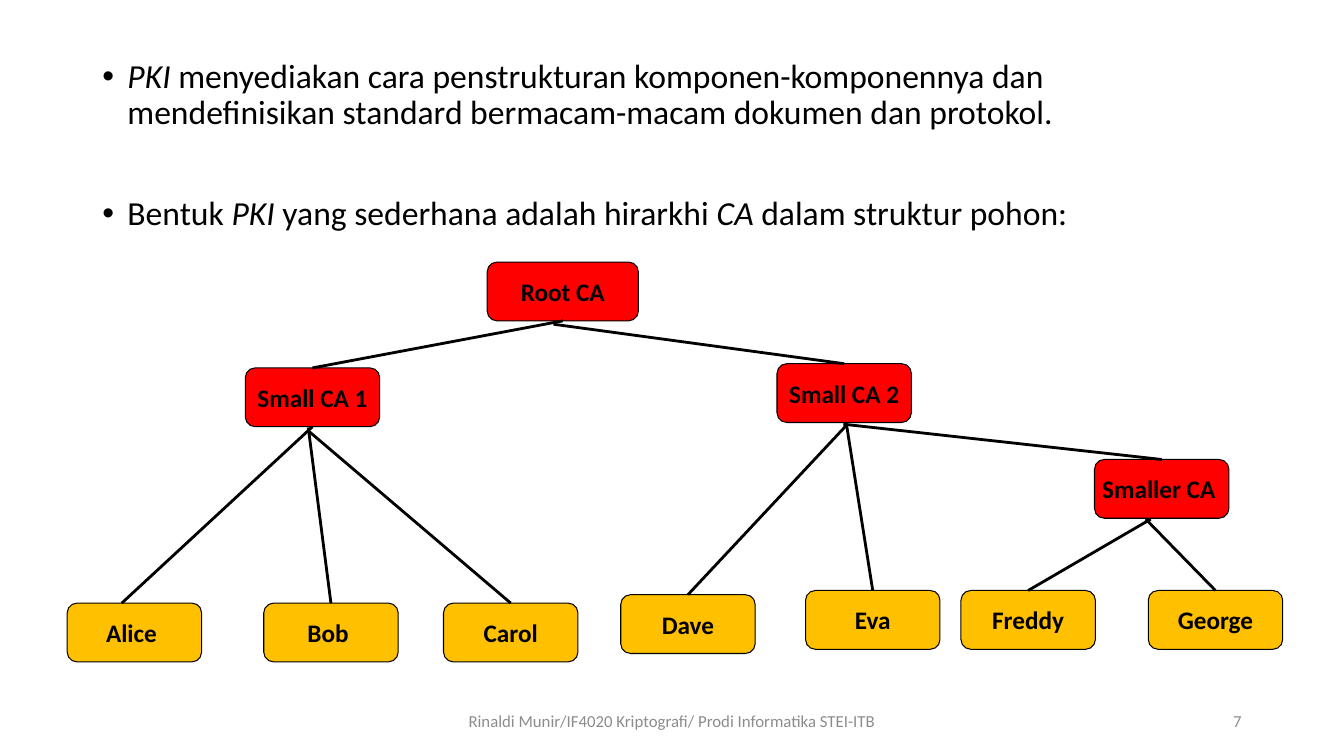
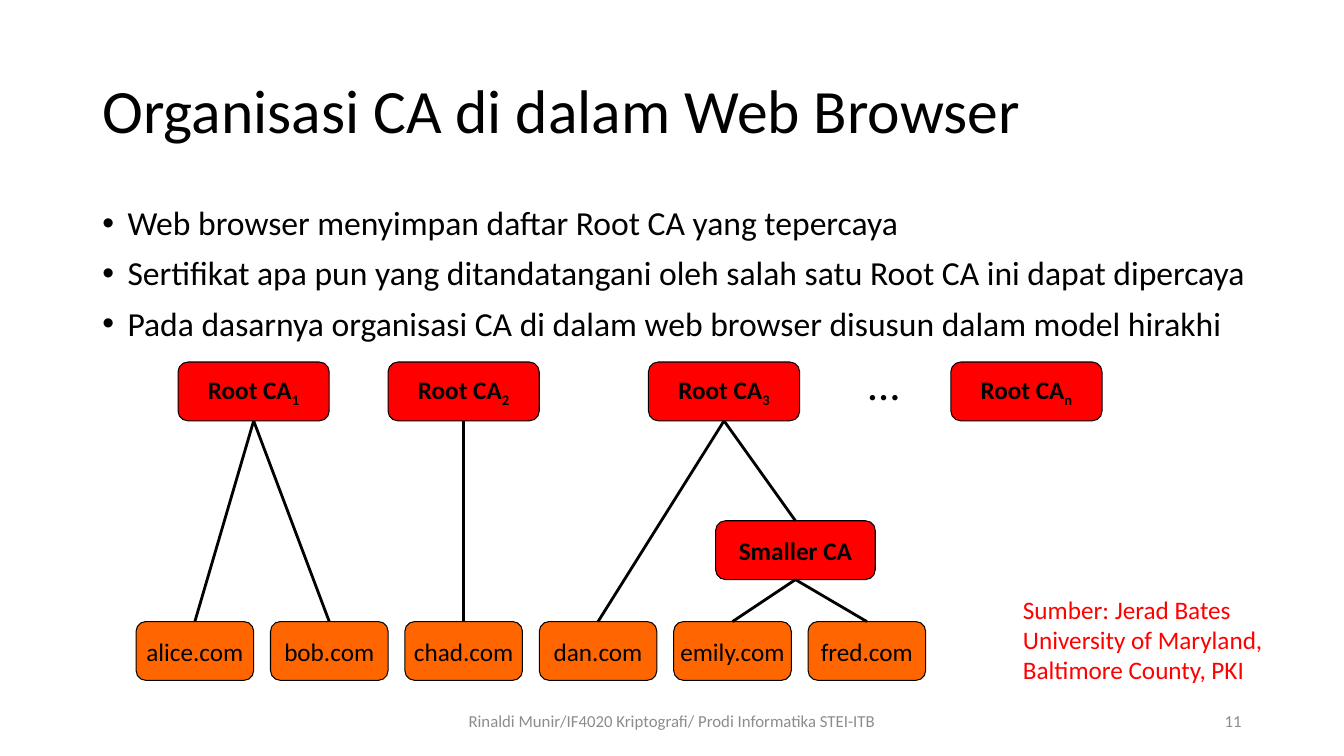
import lxml.etree
import pptx
import pptx.dml.color
import pptx.enum.shapes
import pptx.enum.text
import pptx.oxml.ns
import pptx.util

PX = 7620
SLIDE_W, SLIDE_H = 1600, 900
NODE_H = 70
FONT = "Calibri"
BLACK, GREY, RED, AMBER, ORANGE = "000000", "8C8C8C", "FF0000", "FFC000", "FF6600"
FOOTER = "Rinaldi Munir/IF4020 Kriptografi/ Prodi Informatika STEI-ITB"
LEFT = pptx.enum.text.PP_ALIGN.LEFT
CENTER = pptx.enum.text.PP_ALIGN.CENTER
RIGHT = pptx.enum.text.PP_ALIGN.RIGHT
TOP = pptx.enum.text.MSO_ANCHOR.TOP
MIDDLE = pptx.enum.text.MSO_ANCHOR.MIDDLE


def px(n):
    return pptx.util.Emu(n * PX)


def rgb(color):
    return pptx.dml.color.RGBColor.from_string(color)


def add_xml(parent, tag, **attrs):
    return lxml.etree.SubElement(parent, pptx.oxml.ns.qn(tag), **attrs)


def set_bullet(p):
    pPr = p._p.get_or_add_pPr()
    pPr.set("marL", str(30 * PX))
    pPr.set("indent", str(-30 * PX))
    add_xml(pPr, "a:buFont", typeface="Arial")
    add_xml(pPr, "a:buChar", char="•")


def add_runs(p, runs):
    for text, style in runs:
        r = p.add_run()
        r.text = text
        if style == "italic":
            r.font.italic = True
        elif style == "sub":
            r._r.get_or_add_rPr().set("baseline", "-25000")


def set_paragraph(p, runs, size, color, align=LEFT, bold=False):
    p.alignment = align
    p.font.size = pptx.util.Pt(size)
    p.font.name = FONT
    p.font.bold = bold
    p.font.color.rgb = rgb(color)
    add_runs(p, [(runs, "")] if isinstance(runs, str) else runs)


def text_box(s, box, lines, size, color=BLACK, align=LEFT, anchor=TOP, wrap=True):
    tf = s.shapes.add_textbox(*map(px, box)).text_frame
    tf.word_wrap = wrap
    tf.vertical_anchor = anchor
    for i, line in enumerate(lines):
        p = tf.add_paragraph() if i else tf.paragraphs[0]
        set_paragraph(p, line, size, color, align)
    return tf


def title(s, box, text):
    tf = text_box(s, box, [text], 44, anchor=MIDDLE)
    tf.paragraphs[0].line_spacing = 0.9


def bullets(s, box, lines, gap=10):
    tf = s.shapes.add_textbox(*map(px, box)).text_frame
    tf.word_wrap = True
    for i, line in enumerate(lines):
        p = tf.add_paragraph() if i else tf.paragraphs[0]
        p.line_spacing = 0.9
        p.space_before = pptx.util.Pt(gap if i else 10)
        set_bullet(p)
        set_paragraph(p, line, 24, BLACK)


def footer(s, box, number):
    x, y, w, h = box
    text_box(s, (x, y, 540, h), [FOOTER], 12, GREY, CENTER, MIDDLE)
    text_box(s, (x + w - 360, y, 360, h), [number], 12, GREY, RIGHT, MIDDLE)


def node(s, x, y, w, runs, fill, bold=True):
    kind = pptx.enum.shapes.MSO_SHAPE.FLOWCHART_ALTERNATE_PROCESS
    sp = s.shapes.add_shape(kind, px(x), px(y), px(w), px(NODE_H))
    sp.shadow.inherit = False
    sp.fill.solid()
    sp.fill.fore_color.rgb = rgb(fill)
    sp.line.color.rgb = rgb(BLACK)
    sp.line.width = pptx.util.Pt(0.75)
    tf = sp.text_frame
    tf.word_wrap = False
    tf.vertical_anchor = MIDDLE
    set_paragraph(tf.paragraphs[0], runs, 18, BLACK, CENTER, bold)
    return sp


def link(s, parent, child, dx=0, dy=0, child_dx=0):
    line = s.shapes.add_connector(
        pptx.enum.shapes.MSO_CONNECTOR.STRAIGHT,
        parent.left + parent.width // 2 + px(dx),
        parent.top + parent.height + px(dy),
        child.left + child.width // 2 + px(child_dx),
        child.top,
    )
    line.line.color.rgb = rgb(BLACK)
    line.line.width = pptx.util.Pt(2)
    add_xml(line._element.spPr, "a:effectLst")


def ca_tree(s, box):
    x, y = box[:2]
    root = node(s, x + 500, y, 180, "Root CA", RED)
    small1, small2, smaller = [
        node(s, x + dx, y + dy, 160, name, RED)
        for name, dx, dy in [
            ("Small CA 1", 212, 126),
            ("Small CA 2", 845, 121),
            ("Smaller CA ", 1223, 235),
        ]
    ]
    alice, bob, carol, dave, eva, freddy, george = [
        node(s, x + dx, y + dy, 160, name, AMBER)
        for name, dx, dy in [
            ("Alice ", 0, 406),
            ("Bob ", 234, 406),
            ("Carol", 448, 406),
            ("Dave", 659, 396),
            ("Eva", 879, 391),
            ("Freddy", 1064, 391),
            ("George", 1287, 391),
        ]
    ]
    for parent, child, *shift in [
        (root, small1),
        (root, small2, -11, 4),
        (small1, alice, 0, 0, -15),
        (small1, bob, -5, 1),
        (small1, carol, -6, 4),
        (small2, dave, 3, 3),
        (small2, eva, 3, 4),
        (small2, smaller, -1, 2),
        (smaller, freddy, -13, 1),
        (smaller, george, -19, 1),
    ]:
        link(s, parent, child, *shift)


def root_forest(s, box):
    x, y, w, h = box
    root1, root2, root3, _ = [
        node(s, x + dx, y, 180, [("Root CA", ""), (index, "sub")], RED)
        for index, dx in [("1", 50), ("2", 300), ("3", 610), ("n", w - 180)]
    ]
    text_box(s, (x + 860, y - 13, 67, 76), ["…"], 32, wrap=False)
    smaller = node(s, x + 690, y + 189, 190, "Smaller CA", RED)
    names = ["alice", "bob", "chad", "dan", "emily", "fred"]
    parents = [root1, root1, root2, root3, smaller, smaller]
    for i, (name, parent) in enumerate(zip(names, parents)):
        leaf = node(s, x + 160 * i, y + h - NODE_H, 140, name + ".com", ORANGE, False)
        link(s, parent, leaf)
    link(s, root3, smaller)


def new_slide(prs, number):
    s = prs.slides.add_slide(prs.slide_layouts[6])
    footer(s, (530, 834, 960, 48), number)
    return s


def hierarchy_slide(prs):
    s = new_slide(prs, "7")
    bullets(s, (110, 65, 1380, 745), [
        [
            ("PKI ", "italic"),
            ("menyediakan cara penstrukturan komponen-komponennya dan "
             "mendefinisikan standard bermacam-macam dokumen dan protokol.", ""),
        ],
        [
            ("Bentuk ", ""),
            ("PKI", "italic"),
            (" yang sederhana adalah hirarkhi ", ""),
            ("CA ", "italic"),
            ("dalam struktur pohon:", ""),
        ],
    ], gap=46)
    ca_tree(s, (80, 312, 1447, 476))


def browser_slide(prs):
    s = new_slide(prs, "11")
    title(s, (110, 48, 1380, 174), "Organisasi CA di dalam Web Browser")
    bullets(s, (110, 240, 1432, 571), [
        "Web browser menyimpan daftar Root CA yang tepercaya",
        "Sertifikat apa pun yang ditandatangani oleh salah satu Root CA ini dapat dipercaya",
        "Pada dasarnya organisasi CA di dalam web browser disusun dalam model hirakhi",
    ])
    root_forest(s, (162, 431, 1150, 379))
    text_box(s, (1206, 701, 323, 121), [
        "Sumber: Jerad Bates",
        "University of Maryland, Baltimore County, PKI",
    ], 18, RED)


def main():
    prs = pptx.Presentation()
    prs.slide_width, prs.slide_height = px(SLIDE_W), px(SLIDE_H)
    hierarchy_slide(prs)
    browser_slide(prs)
    prs.save("out.pptx")


if __name__ == "__main__":
    main()
